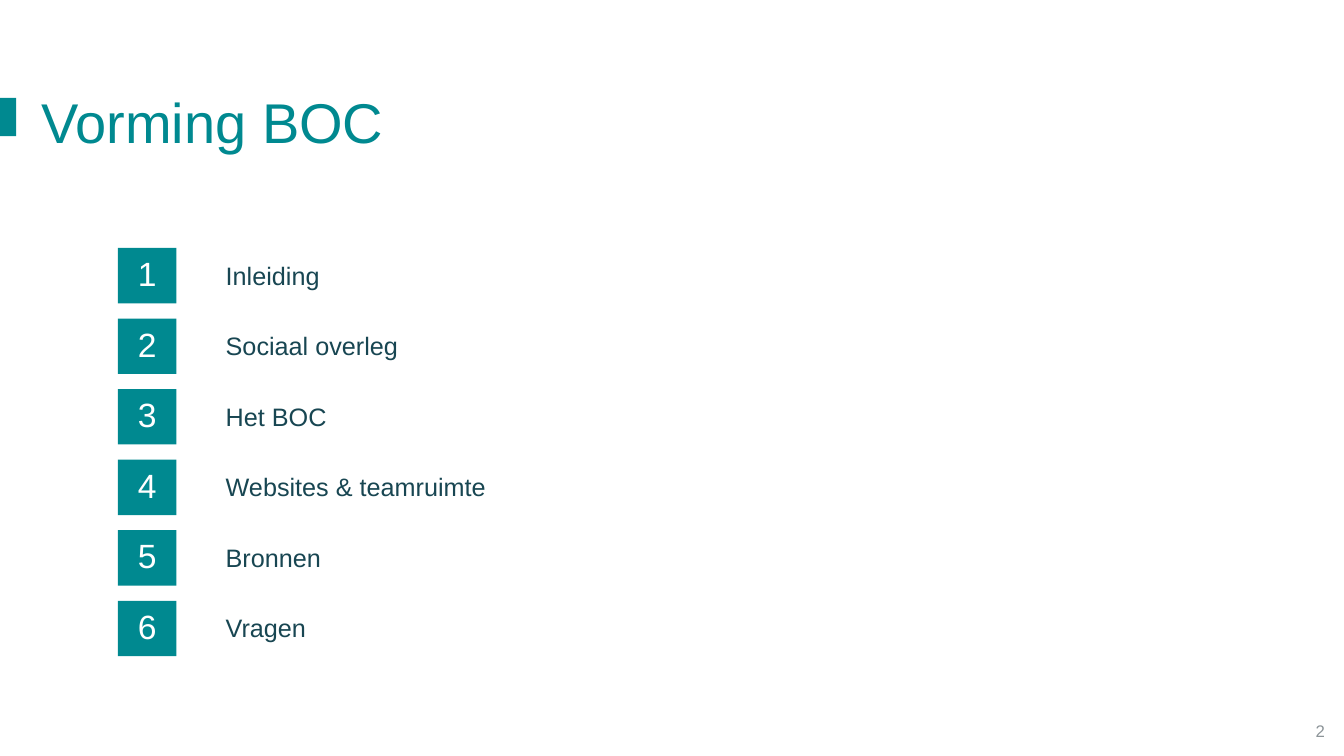
from pptx import Presentation
from pptx.dml.color import RGBColor
from pptx.enum import shapes, text
from pptx.util import Inches, Pt

TEAL = RGBColor(0x00, 0x89, 0x90)
NAVY = RGBColor(0x18, 0x46, 0x52)
GREY = RGBColor(0x8C, 0x94, 0x98)
WHITE = RGBColor(0xFF, 0xFF, 0xFF)

TOPICS = ["Inleiding", "Sociaal overleg", "Het BOC",
          "Websites & teamruimte", "Bronnen", "Vragen"]
ROW_PITCH = 0.7


def write(shape, wording, size, color, align=text.PP_ALIGN.LEFT,
          anchor=text.MSO_ANCHOR.TOP):
    frame = shape.text_frame
    frame.word_wrap = True
    frame.vertical_anchor = anchor
    frame.text = wording
    line = frame.paragraphs[0]
    line.alignment = align
    font = line.runs[0].font
    font.name, font.size, font.color.rgb = "Arial", Pt(size), color
    return line


def add_label(slide, left, top, width, height, *wording, **layout):
    label = slide.shapes.add_textbox(
        Inches(left), Inches(top), Inches(width), Inches(height))
    write(label, *wording, **layout)


def add_block(slide, left, top, width, height):
    """Add a plain teal rectangle."""
    block = slide.shapes.add_shape(
        shapes.MSO_SHAPE.RECTANGLE,
        Inches(left), Inches(top), Inches(width), Inches(height))
    block.shadow.inherit = False
    block.fill.solid()
    block.fill.fore_color.rgb = TEAL
    block.line.fill.background()
    return block


def add_heading(slide, left, top, width):
    add_block(slide, left, top + 0.15, 0.16, 0.38)
    add_label(slide, left + 0.31, top, width, 0.77, "Vorming BOC", 40, TEAL)


def add_agenda(slide, left, top, width):
    """Stack numbered tiles, each with its topic to the right."""
    for index, topic in enumerate(TOPICS):
        row_top = top + index * ROW_PITCH
        tile = add_block(slide, left, row_top, 0.58, 0.55)
        number = write(tile, str(index + 1), 24, WHITE,
                       text.PP_ALIGN.CENTER, text.MSO_ANCHOR.MIDDLE)
        number.line_spacing = 0.9
        add_label(slide, left + 0.97, row_top + 0.07, width - 0.97, 0.4,
                  topic, 18, NAVY)


def add_page_number(slide, left, top, width):
    add_label(slide, left, top, width, 0.4, "2", 12, GREY,
              align=text.PP_ALIGN.RIGHT, anchor=text.MSO_ANCHOR.MIDDLE)


def main():
    deck = Presentation()
    deck.slide_width, deck.slide_height = Inches(13.33), Inches(7.5)
    slide = deck.slides.add_slide(deck.slide_layouts[6])
    add_page_number(slide, 10.24, 7.05, 3)
    add_heading(slide, 0, 0.82, 12.21)
    add_agenda(slide, 1.17, 2.46, 11.35)
    deck.save("out.pptx")


if __name__ == "__main__":
    main()
